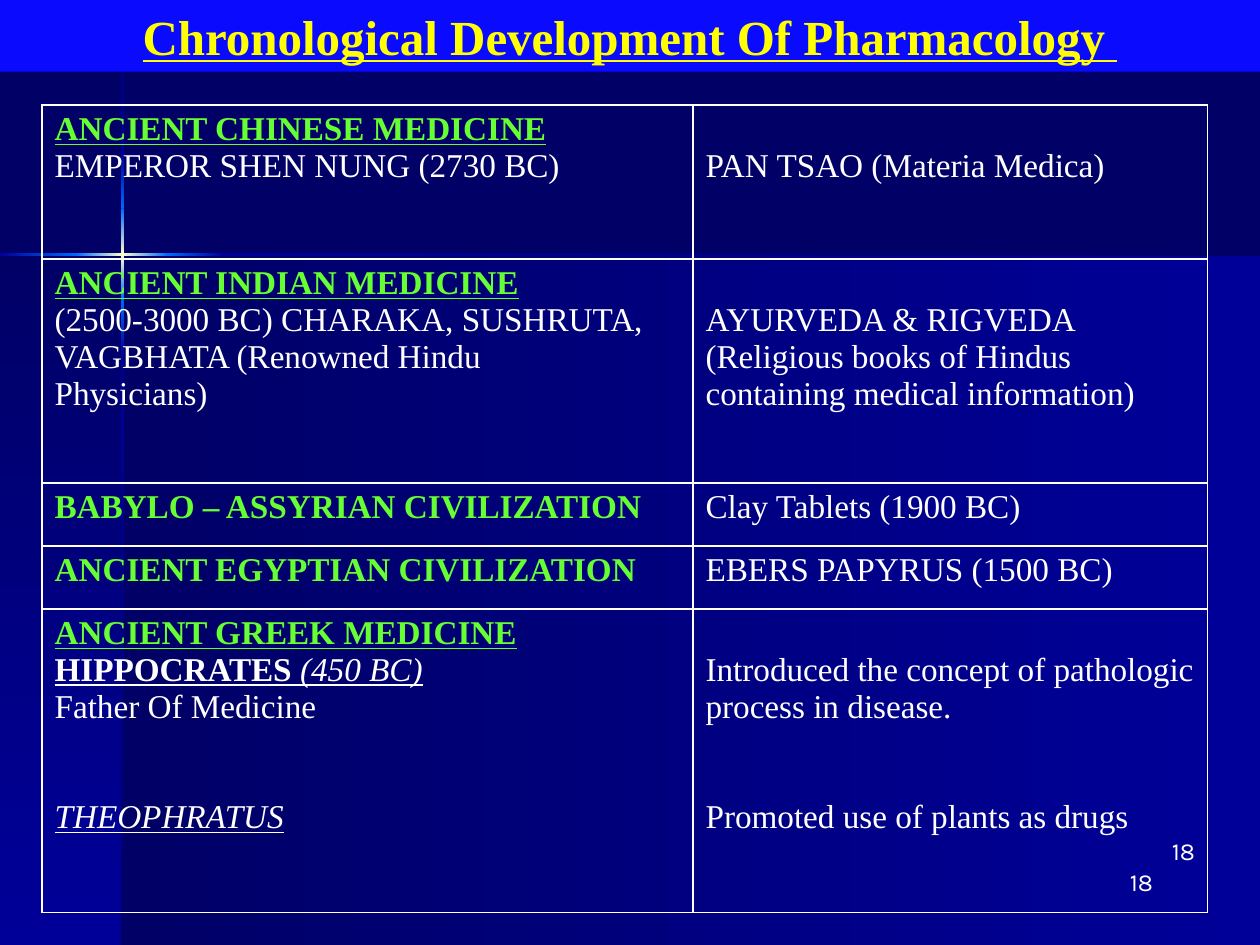
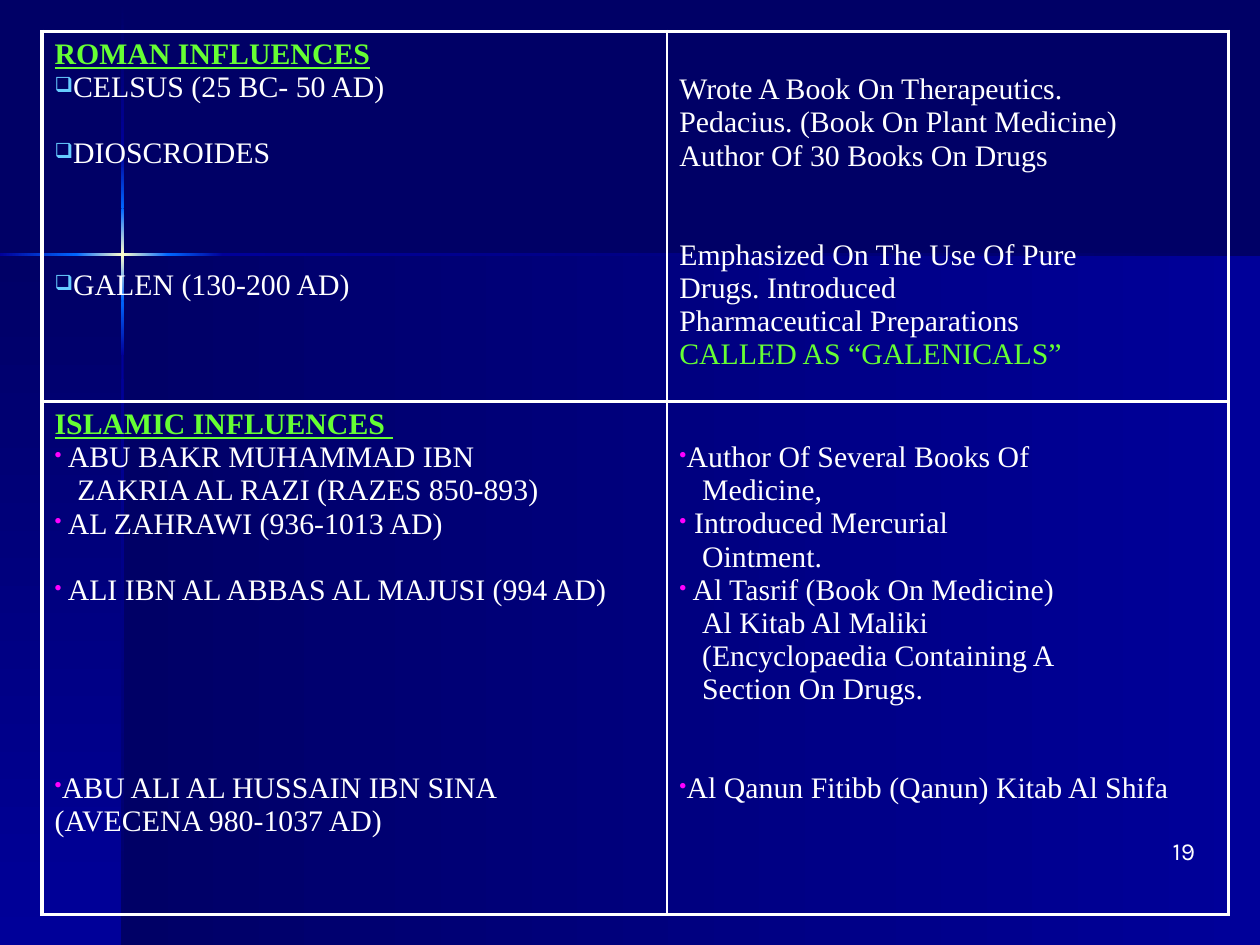
from itertools import pairwise
from typing import NamedTuple

from lxml import etree
from pptx import Presentation
from pptx.dml.color import RGBColor
from pptx.enum.shapes import MSO_SHAPE
from pptx.enum.text import MSO_ANCHOR, MSO_AUTO_SIZE, PP_ALIGN
from pptx.oxml.ns import qn
from pptx.util import Pt

RECT = MSO_SHAPE.RECTANGLE
MIDDLE = MSO_ANCHOR.MIDDLE
NO_FIT = MSO_AUTO_SIZE.NONE
CENTER, RIGHT = PP_ALIGN.CENTER, PP_ALIGN.RIGHT

COLORS = {
    "navy": "000066", "blue": "000099", "azure": "0066FF", "cream": "FFFFCC",
    "band": "0A0AFF", "yellow": "FFFF00", "white": "FFFFFF", "green": "66FF33",
    "sky": "66CCFF", "magenta": "FF00FF",
}
SERIF, SANS = "Times New Roman", "Karla"
LINE_HEIGHT = 1.107  # height of a text line relative to the font size
WIDTH, HEIGHT = 720, 540
CROSS_X, CROSS_Y, RAY = 70, 145.4, 1.4
TITLE_ONLY, BLANK = 5, 6


class Panel(NamedTuple):
    left: float
    top: float
    width: float
    height: float
    start: str
    end: str
    down: bool


class Run(NamedTuple):
    text: str
    color: str = "white"
    bold: bool = False
    underline: bool = False
    italic: bool = False


class Bullet(NamedTuple):
    char: str
    color: str


class Para(NamedTuple):
    runs: list[Run]
    gap: int = 0  # empty lines above
    bullet: Bullet | None = None
    indent: float = 0


class Cell(NamedTuple):
    paras: list[Para]
    lead: float = 0  # empty lines above the first paragraph


class Grid(NamedTuple):
    left: float
    top: float
    cols: list[float]
    rows: list[float]
    size: float
    rule: float
    cells: list[list[Cell]]


SQUARE, DOT = Bullet("❑", "sky"), Bullet("•", "magenta")


def heading(text: str, underline: bool = True) -> Para:
    return Para([Run(text, "green", True, underline)])


def plain(text: str, gap: int = 0, indent: float = 0) -> Para:
    return Para([Run(text)], gap, indent=indent)


def square(text: str, gap: int = 0) -> Para:
    return Para([Run(text)], gap, SQUARE)


def dot(text: str, gap: int = 0) -> Para:
    return Para([Run(text)], gap, DOT)


def hanging(text: str) -> Para:
    return plain(text, indent=13)


EARLY = Grid(24, 60, [372, 294], [88, 128, 36, 36, 173.5], 19, 1, [
    [Cell([heading("ANCIENT CHINESE MEDICINE"),
           plain("EMPEROR SHEN NUNG (2730 BC)")]),
     Cell([plain("PAN TSAO (Materia Medica)")], 1)],
    [Cell([heading("ANCIENT INDIAN MEDICINE"),
           plain("(2500-3000 BC) CHARAKA, SUSHRUTA, VAGBHATA (Renowned Hindu"),
           plain("Physicians)")]),
     Cell([plain("AYURVEDA & RIGVEDA (Religious books of Hindus "
                 "containing medical information)")], 1)],
    [Cell([heading("BABYLO – ASSYRIAN CIVILIZATION", False)]),
     Cell([plain("Clay Tablets (1900 BC)")])],
    [Cell([heading("ANCIENT EGYPTIAN CIVILIZATION", False)]),
     Cell([plain("EBERS PAPYRUS (1500 BC)")])],
    [Cell([heading("ANCIENT GREEK MEDICINE"),
           Para([Run("HIPPOCRATES", bold=True, underline=True),
                 Run(" (450 BC)", underline=True, italic=True)]),
           plain("Father Of Medicine"),
           Para([Run("THEOPHRATUS", underline=True, italic=True)], 2)]),
     Cell([plain("Introduced the concept of pathologic process in disease."),
           plain("Promoted use of plants as drugs", 2)], 1)],
])

LATER = Grid(24, 18, [357, 321], [211.5, 293], 17, 2.25, [
    [Cell([heading("ROMAN INFLUENCES"),
           square("CELSUS (25 BC- 50 AD)"),
           square("DIOSCROIDES", 1),
           square("GALEN (130-200 AD)", 3)]),
     Cell([plain("Wrote A Book On Therapeutics."),
           plain("Pedacius. (Book On Plant Medicine)"),
           plain("Author Of 30 Books On Drugs"),
           plain("Emphasized On The Use Of Pure", 2),
           plain("Drugs. Introduced"),
           plain("Pharmaceutical Preparations"),
           Para([Run("CALLED AS “GALENICALS”", "green")])], 1.07)],
    [Cell([heading("ISLAMIC INFLUENCES "),
           dot(" ABU BAKR MUHAMMAD IBN"),
           hanging("ZAKRIA AL RAZI (RAZES 850-893)"),
           dot(" AL ZAHRAWI (936-1013 AD)"),
           dot(" ALI IBN AL ABBAS AL MAJUSI (994 AD)", 1),
           dot("ABU ALI AL HUSSAIN IBN SINA", 5),
           plain("(AVECENA 980-1037 AD)")]),
     Cell([dot("Author Of Several Books Of"),
           hanging("Medicine,"),
           dot(" Introduced Mercurial"),
           hanging("Ointment."),
           dot(" Al Tasrif (Book On Medicine)"),
           hanging("Al Kitab Al Maliki"),
           hanging("(Encyclopaedia Containing A"),
           hanging("Section On Drugs."),
           dot("Al Qanun Fitibb (Qanun) Kitab Al Shifa", 2)], 1)],
])


def rgb(name: str) -> RGBColor:
    return RGBColor.from_string(COLORS[name])


def add_run(p, run: Run, size: float, font: str = SERIF) -> None:
    r = p.add_run()
    r.text = run.text
    f = r.font
    f.name, f.size = font, Pt(size)
    f.bold, f.underline, f.italic = run.bold, run.underline, run.italic
    f.color.rgb = rgb(run.color)


def backdrop_panels() -> list[Panel]:
    """Two large fields and the rays of the cross that glows between them."""
    depth = HEIGHT - CROSS_Y
    panels = [Panel(CROSS_X, CROSS_Y, WIDTH - CROSS_X, depth, "navy", "blue", False),
              Panel(0, CROSS_Y, CROSS_X, depth, "navy", "blue", True)]
    x, y = CROSS_X - RAY / 2, CROSS_Y - RAY / 2
    column = [(0.7, "navy"), (87, "blue"), (119, "azure"), (CROSS_Y, "cream"),
              (171.5, "azure"), (203, "blue"), (HEIGHT, "navy")]
    row = [(0, "blue"), (43.5, "azure"), (CROSS_X, "cream"),
           (96, "azure"), (127.5, "blue"), (WIDTH, "navy")]
    panels += [Panel(x, a, RAY, b - a, c, d, True)
               for (a, c), (b, d) in pairwise(column)]
    panels += [Panel(a, y, b - a, RAY, c, d, False)
               for (a, c), (b, d) in pairwise(row)]
    return panels


def draw_backdrop(prs, slide) -> None:
    """Build the panels on a slide, then move them behind everything on the master."""
    master = prs.slide_master
    master.background.fill.solid()
    master.background.fill.fore_color.rgb = rgb("navy")
    for i, panel in enumerate(backdrop_panels()):
        sp = slide.shapes.add_shape(RECT, *map(Pt, panel[:4]))
        sp.shadow.inherit = False
        sp.line.fill.background()
        sp.fill.gradient()
        sp.fill.gradient_angle = 270 if panel.down else 0
        for stop, color in zip(sp.fill.gradient_stops, (panel.start, panel.end)):
            stop.color.rgb = rgb(color)
        sp.element.nvSpPr.cNvPr.set("id", str(100 + i))
        master.shapes.element.insert(2 + i, sp.element)


def draw_title(slide, text: str) -> None:
    sp = slide.shapes.title
    sp.left, sp.top, sp.width, sp.height = Pt(0), Pt(0), Pt(WIDTH), Pt(41)
    sp.fill.solid()
    sp.fill.fore_color.rgb = rgb("band")
    tf = sp.text_frame
    tf.auto_size, tf.vertical_anchor = NO_FIT, MIDDLE
    p = tf.paragraphs[0]
    p.alignment = CENTER
    add_run(p, Run(text, "yellow", bold=True, underline=True), 28)


def draw_number(slide, number: int, left: float = 540, top: float = 474) -> None:
    tf = slide.shapes.add_textbox(Pt(left), Pt(top), Pt(150), Pt(36)).text_frame
    tf.word_wrap = True
    p = tf.paragraphs[0]
    p.alignment = RIGHT
    add_run(p, Run(str(number)), 14, SANS)


def set_bullet(p, bullet: Bullet) -> None:
    pPr = p._p.get_or_add_pPr()
    color = etree.SubElement(pPr, qn("a:buClr"))
    etree.SubElement(color, qn("a:srgbClr"), val=COLORS[bullet.color])
    etree.SubElement(pPr, qn("a:buSzPct"), val="70000")
    etree.SubElement(pPr, qn("a:buChar"), char=bullet.char)


def set_borders(cell, widths: dict[str, float]) -> None:
    tcPr = cell._tc.get_or_add_tcPr()
    for i, (side, width) in enumerate(widths.items()):
        ln = etree.Element(qn(f"a:ln{side}"), w=str(Pt(width)))
        fill = etree.SubElement(ln, qn("a:solidFill"))
        etree.SubElement(fill, qn("a:srgbClr"), val=COLORS["white"])
        tcPr.insert(i, ln)


def fill_cell(cell, content: Cell, size: float) -> None:
    line = size * LINE_HEIGHT
    cell.fill.background()
    cell.margin_top = Pt(3.6 + content.lead * line)
    tf = cell.text_frame
    for i, para in enumerate(content.paras):
        p = tf.add_paragraph() if i else tf.paragraphs[0]
        p.space_before = Pt(para.gap * line)
        pPr = p._p.get_or_add_pPr()
        pPr.set("marL", str(Pt(para.indent)))
        pPr.set("indent", "0")
        if para.bullet:
            set_bullet(p, para.bullet)
        for run in para.runs:
            add_run(p, run, size)


def draw_grid(slide, grid: Grid) -> None:
    frame = slide.shapes.add_table(
        len(grid.rows), len(grid.cols), Pt(grid.left), Pt(grid.top),
        Pt(sum(grid.cols)), Pt(sum(grid.rows)))
    table = frame.table
    table.first_row = table.horz_banding = False
    for col, width in zip(table.columns, grid.cols):
        col.width = Pt(width)
    for row, height in zip(table.rows, grid.rows):
        row.height = Pt(height)
    last = len(grid.cols) - 1
    for i, contents in enumerate(grid.cells):
        for j, content in enumerate(contents):
            cell = table.cell(i, j)
            fill_cell(cell, content, grid.size)
            set_borders(cell, {"L": 1 if j else grid.rule,
                               "R": 1 if j < last else grid.rule,
                               "T": grid.rule, "B": grid.rule})


def main() -> None:
    prs = Presentation()
    prs.slide_width, prs.slide_height = Pt(WIDTH), Pt(HEIGHT)

    early = prs.slides.add_slide(prs.slide_layouts[TITLE_ONLY])
    draw_backdrop(prs, early)
    draw_title(early, "Chronological Development Of Pharmacology ")
    draw_number(early, 18, 516, 492)
    draw_number(early, 18)
    draw_grid(early, EARLY)

    later = prs.slides.add_slide(prs.slide_layouts[BLANK])
    draw_number(later, 19)
    draw_grid(later, LATER)

    prs.save("out.pptx")


if __name__ == "__main__":
    main()
